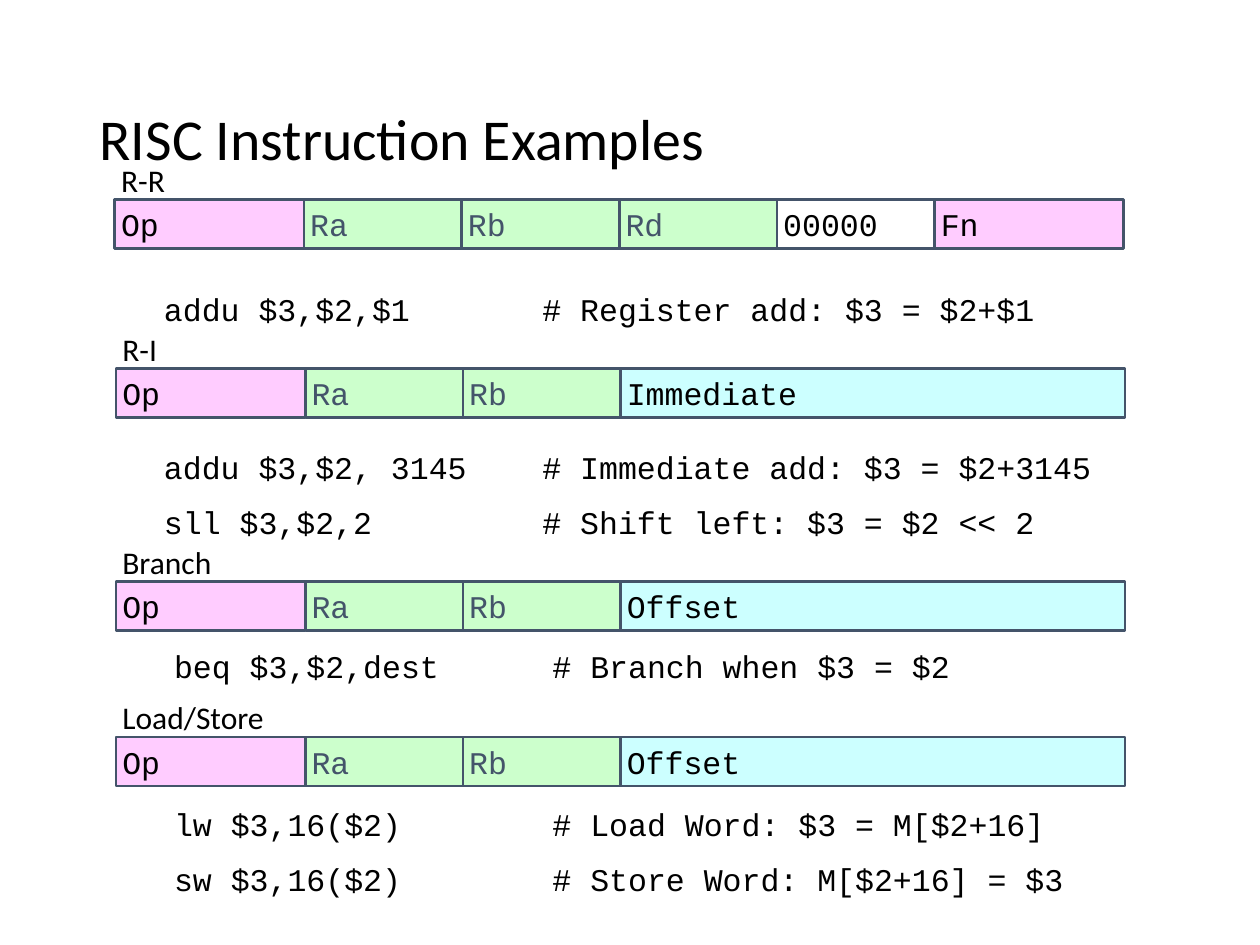
from dataclasses import dataclass

from lxml.etree import SubElement
from pptx import Presentation
from pptx.dml.color import RGBColor
from pptx.enum.shapes import MSO_SHAPE
from pptx.enum.text import MSO_ANCHOR, MSO_AUTO_SIZE, PP_ALIGN
from pptx.oxml.ns import qn
from pptx.util import Inches, Pt


@dataclass(frozen=True)
class Theme:
    ink: RGBColor = RGBColor(0x00, 0x00, 0x00)
    slate: RGBColor = RGBColor(0x44, 0x54, 0x6A)
    opcode: RGBColor = RGBColor(0xFF, 0xCC, 0xFF)
    register: RGBColor = RGBColor(0xCC, 0xFF, 0xCC)
    constant: RGBColor = RGBColor(0xCC, 0xFF, 0xFF)
    blank: RGBColor = RGBColor(0xFF, 0xFF, 0xFF)
    text_font: str = "Calibri"
    code_font: str = "Courier New"
    title_size: Pt = Pt(33)
    body_size: Pt = Pt(18)
    border: Pt = Pt(1.5)


THEME = Theme()

# Field geometry: a 32-bit word is 8 inches wide
INCHES_PER_BIT = 0.25
FIELD_HEIGHT = 0.39
LABEL_RISE = 0.34
LINE_HEIGHT = 0.37
LINE_PITCH = 0.42
INSET = 0.05
TAB_STOPS = (2, 3)

# Fields: name, bits, fill, text colour
OP = ("Op", 6, THEME.opcode, THEME.ink)
RA = ("Ra", 5, THEME.register, THEME.slate)
RB = ("Rb", 5, THEME.register, THEME.slate)
RD = ("Rd", 5, THEME.register, THEME.slate)
SHIFT = ("00000", 5, THEME.blank, THEME.ink)
FN = ("Fn", 6, THEME.opcode, THEME.ink)
IMMEDIATE = ("Immediate", 16, THEME.constant, THEME.ink)
OFFSET = ("Offset", 16, THEME.constant, THEME.ink)

# Formats: label, left, top of the fields, fields, code indent, code drop, code
FORMATS = [
    ("R-R", 0.91, 1.58, [OP, RA, RB, RD, SHIFT, FN], 0.34, 0.67,
     ["addu $3,$2,$1\t\t# Register add: $3 = $2+$1"]),
    ("R-I", 0.92, 2.92, [OP, RA, RB, IMMEDIATE], 0.33, 0.58,
     ["addu $3,$2, 3145\t# Immediate add: $3 = $2+3145",
      "sll $3,$2,2\t\t# Shift left: $3 = $2 << 2"]),
    ("Branch", 0.92, 4.61, [OP, RA, RB, OFFSET], 0.41, 0.47,
     ["beq $3,$2,dest\t# Branch when $3 = $2"]),
    ("Load/Store", 0.92, 5.84, [OP, RA, RB, OFFSET], 0.41, 0.49,
     ["lw $3,16($2)\t\t# Load Word: $3 = M[$2+16]",
      "sw $3,16($2)\t\t# Store Word: M[$2+16] = $3"]),
]


def add_text(paragraph, text, font, size, colour):
    paragraph.alignment = PP_ALIGN.LEFT
    run = paragraph.add_run()
    run.text = text
    run.font.name = font
    run.font.size = size
    run.font.color.rgb = colour


def prepare_frame(frame, anchor):
    frame.word_wrap = True
    frame.vertical_anchor = anchor
    frame.margin_left = frame.margin_right = Inches(INSET)
    frame.margin_top = frame.margin_bottom = Inches(INSET)


def add_title(slide, left, top, width, height):
    title = slide.shapes.title
    title.left, title.top = Inches(left), Inches(top)
    title.width, title.height = Inches(width), Inches(height)
    frame = title.text_frame
    frame.auto_size = MSO_AUTO_SIZE.NONE
    frame.vertical_anchor = MSO_ANCHOR.MIDDLE
    heading = frame.paragraphs[0]
    heading.line_spacing = 0.9
    add_text(heading, "RISC Instruction Examples", THEME.text_font,
             THEME.title_size, THEME.ink)


def add_fields(slide, label, left, top, fields):
    group = slide.shapes.add_group_shape()

    # Format label above the word
    caption = group.shapes.add_textbox(
        Inches(left), Inches(top - LABEL_RISE), Inches(1.58), Inches(LINE_HEIGHT))
    prepare_frame(caption.text_frame, MSO_ANCHOR.MIDDLE)
    add_text(caption.text_frame.paragraphs[0], label, THEME.text_font,
             THEME.body_size, THEME.ink)

    # Fields side by side, as wide as their bits
    for name, bits, fill, colour in fields:
        width = bits * INCHES_PER_BIT
        field = group.shapes.add_shape(
            MSO_SHAPE.RECTANGLE, Inches(left), Inches(top),
            Inches(width), Inches(FIELD_HEIGHT))
        field.shadow.inherit = False
        field.fill.solid()
        field.fill.fore_color.rgb = fill
        field.line.color.rgb = THEME.slate
        field.line.width = THEME.border
        prepare_frame(field.text_frame, MSO_ANCHOR.MIDDLE)
        add_text(field.text_frame.paragraphs[0], name, THEME.code_font,
                 THEME.body_size, colour)
        left += width


def add_code(slide, left, top, lines):
    height = LINE_HEIGHT + LINE_PITCH * (len(lines) - 1)
    code = slide.shapes.add_textbox(
        Inches(left), Inches(top), Inches(7.75), Inches(height))
    frame = code.text_frame
    prepare_frame(frame, MSO_ANCHOR.TOP)
    frame.auto_size = MSO_AUTO_SIZE.SHAPE_TO_FIT_TEXT
    for index, line in enumerate(lines):
        paragraph = frame.add_paragraph() if index else frame.paragraphs[0]
        add_text(paragraph, line, THEME.code_font, THEME.body_size, THEME.ink)
        if index:
            paragraph.space_before = Pt(10)
        # Tab stops align the comments
        tabs = SubElement(paragraph._p.get_or_add_pPr(), qn("a:tabLst"))
        for stop in TAB_STOPS:
            SubElement(tabs, qn("a:tab"), pos=str(Inches(stop)), algn="l")


def add_format(slide, label, left, top, fields, indent, drop, lines):
    add_fields(slide, label, left, top, fields)
    add_code(slide, left + indent, top + drop, lines)


def main():
    deck = Presentation()
    deck.slide_width, deck.slide_height = Inches(9.99), Inches(7.49)
    slide = deck.slides.add_slide(deck.slide_layouts.get_by_name("Title Only"))
    add_title(slide, 0.69, 0.4, 8.61, 1.45)
    for instruction_format in FORMATS:
        add_format(slide, *instruction_format)
    deck.save("out.pptx")


if __name__ == "__main__":
    main()
